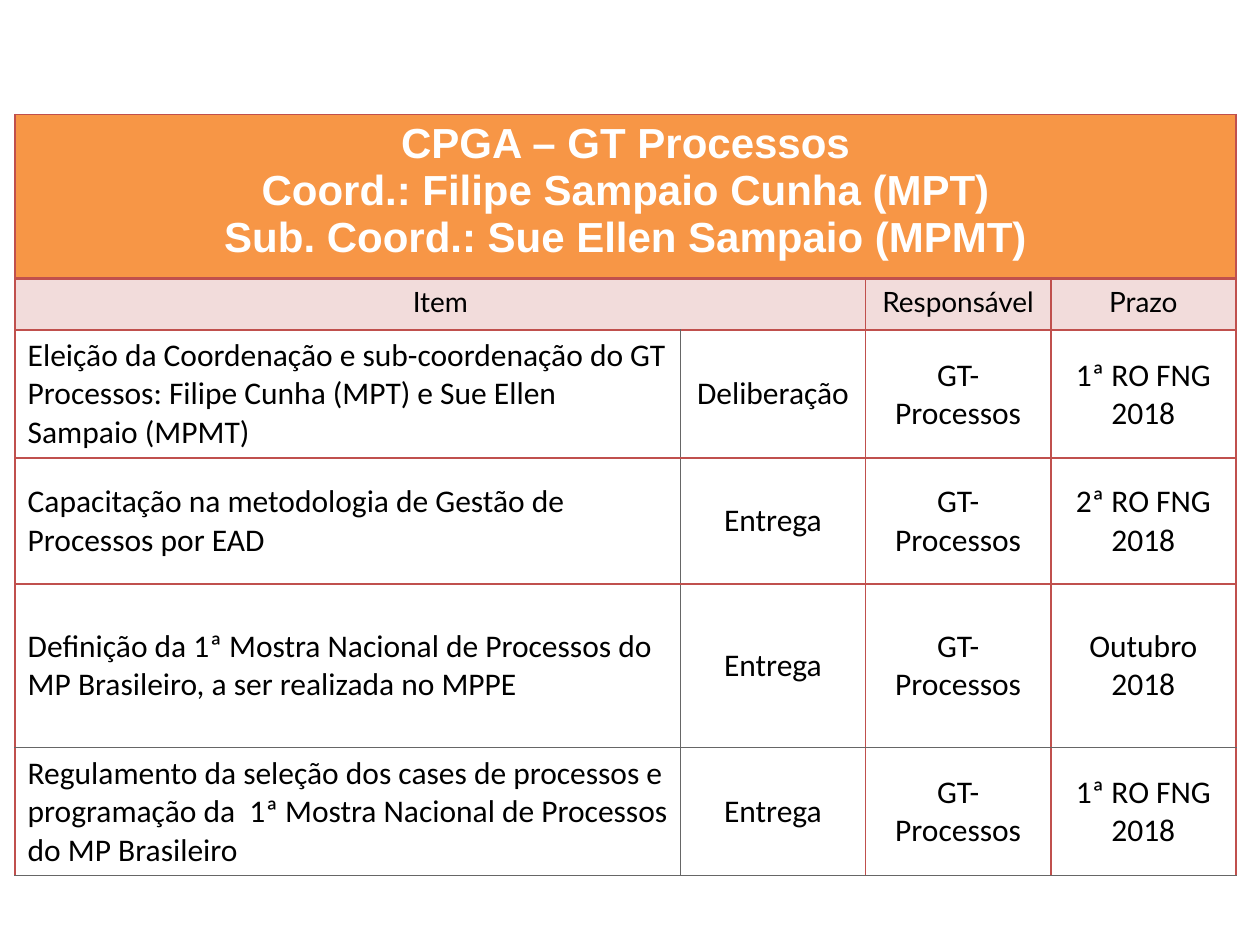
from dataclasses import dataclass

from lxml.etree import SubElement
from pptx import Presentation
from pptx.dml.color import RGBColor
from pptx.enum.text import MSO_ANCHOR, PP_ALIGN
from pptx.oxml.ns import qn
from pptx.util import Inches, Pt

RED, GRAY, ORANGE, PINK = "C0504D", "666666", "F79646", "F2DCDB"
COLS = (5.28, 1.47, 1.47, 1.47)
ROWS = (1.3, 0.41, 1, 1, 1.3, 1)
LAST = len(ROWS) - 1


@dataclass
class Task:
    item: str
    kind: str
    owner: str
    due: str
    tight: bool = False


TITLE = ("CPGA – GT Processos\nCoord.: Filipe Sampaio Cunha (MPT)\n"
         "Sub. Coord.: Sue Ellen Sampaio (MPMT)")
HEADS = {0: "Item", 2: "Responsável", 3: "Prazo"}
TASKS = (
    Task("Eleição da Coordenação e sub-coordenação do GT Processos: "
         "Filipe Cunha (MPT) e Sue Ellen Sampaio (MPMT)",
         "Deliberação", "GT-\nProcessos", "1ª RO FNG 2018", True),
    Task("Capacitação na metodologia de Gestão de Processos por EAD",
         "Entrega", "GT-Processos", "2ª RO FNG 2018"),
    Task("Definição da 1ª Mostra Nacional de Processos do MP Brasileiro, "
         "a ser realizada no MPPE",
         "Entrega", "GT-Processos", "Outubro 2018"),
    Task("Regulamento da seleção dos cases de processos e programação da  "
         "1ª Mostra Nacional de Processos do MP Brasileiro",
         "Entrega", "GT-\nProcessos", "1ª RO FNG 2018"),
)


def color(code: str) -> RGBColor:
    return RGBColor.from_string(code)


def write(cell, text: str, size=18, font="Calibri", ink="000000", bold=False,
          align=PP_ALIGN.CENTER, anchor=MSO_ANCHOR.MIDDLE) -> None:
    cell.text = text
    cell.vertical_anchor = anchor
    for para in cell.text_frame.paragraphs:
        para.alignment = align
        for run in para.runs:
            run.font.size = Pt(size)
            run.font.name = font
            run.font.bold = bold
            run.font.color.rgb = color(ink)


def edge(cell, side: str, code: str, width: float) -> None:
    """Draw one cell border; side is L, R, T or B."""
    props = cell._tc.get_or_add_tcPr()
    line = SubElement(props, qn(f"a:ln{side}"), w=str(Pt(width)))
    fill = SubElement(line, qn("a:solidFill"))
    SubElement(fill, qn("a:srgbClr"), val=code)


def frame(cell, row: int, col: int) -> None:
    """Draw the four borders of a cell by its place in the grid."""
    thin, red, thick = (GRAY, 0.5), (RED, 1), (RED, 2)
    tops = {1: thick, LAST: thin}
    ends = {0: thick, LAST - 1: thin, LAST: thin}
    edge(cell, "L", *(thin if row > 1 and col == 1 else red))
    edge(cell, "R", *(thin if row > 1 and col == 0 else red))
    edge(cell, "T", *tops.get(row, red))
    edge(cell, "B", *ends.get(row, red))


def paint(cell, row: int) -> None:
    if row > 1:
        cell.fill.background()
    else:
        cell.fill.solid()
        cell.fill.fore_color.rgb = color((ORANGE, PINK)[row])


def main() -> None:
    deck = Presentation()
    deck.slide_width, deck.slide_height = Inches(10), Inches(7.5)
    slide = deck.slides.add_slide(deck.slide_layouts[6])
    grid = slide.shapes.add_table(
        len(ROWS), len(COLS), Inches(0.12), Inches(0.91),
        Inches(sum(COLS)), Inches(sum(ROWS))).table
    grid.first_row = grid.horz_banding = False
    for col, width in zip(grid.columns, COLS):
        col.width = Inches(width)
    for row, height in zip(grid.rows, ROWS):
        row.height = Inches(height)
    for row in range(len(ROWS)):
        for col in range(len(COLS)):
            cell = grid.cell(row, col)
            frame(cell, row, col)
            paint(cell, row)
    grid.cell(0, 0).merge(grid.cell(0, 3))
    grid.cell(1, 0).merge(grid.cell(1, 1))

    write(grid.cell(0, 0), TITLE, size=24, font="Arial", ink="FFFFFF",
          bold=True, anchor=MSO_ANCHOR.TOP)
    for col, text in HEADS.items():
        write(grid.cell(1, col), text, size=16, font="Lato",
              anchor=MSO_ANCHOR.TOP)
    for row, task in enumerate(TASKS, 2):
        write(grid.cell(row, 0), task.item, align=PP_ALIGN.LEFT)
        for col, text in enumerate((task.kind, task.owner, task.due), 1):
            cell = grid.cell(row, col)
            write(cell, text)
            if task.tight and col > 1:
                cell.margin_left = cell.margin_right = Inches(0.01)
                cell.margin_top, cell.margin_bottom = Inches(0.01), 0
    deck.save("out.pptx")


if __name__ == "__main__":
    main()
